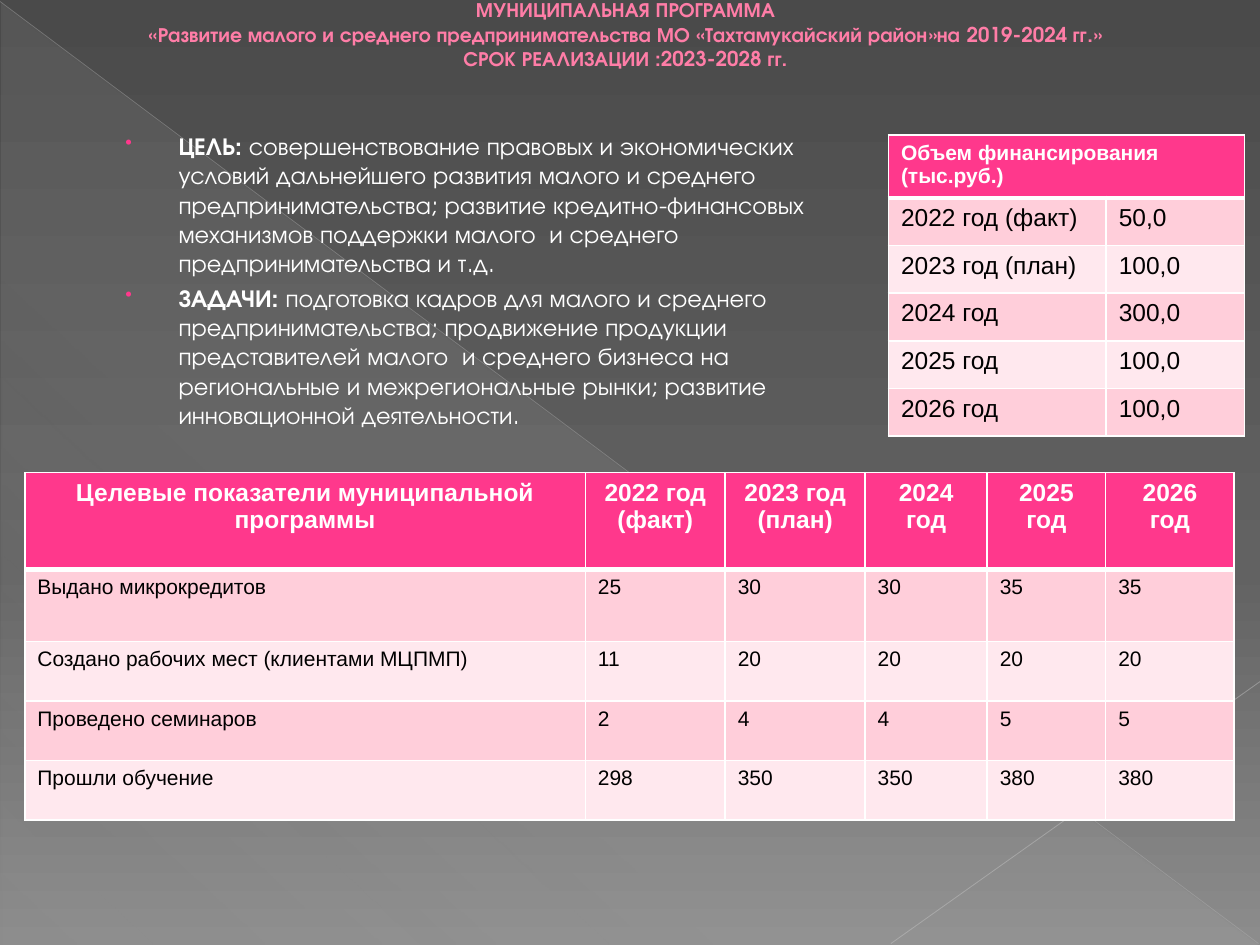
from lxml import etree
from pptx import Presentation
from pptx.dml.color import RGBColor
from pptx.enum.shapes import MSO_CONNECTOR as Link, MSO_SHAPE as Shape
from pptx.enum.text import MSO_ANCHOR as Anchor, PP_ALIGN as Align
from pptx.oxml.ns import qn
from pptx.util import Cm, Pt

paint = RGBColor.from_string
FONT = "TeX Gyre Adventor"
PINK, WHITE, BLACK = "FF388C", "FFFFFF", "000000"
BANDS = ["FFE8EE", "FFCEDA"]


def blend(node, angle, stops):
    node.find(qn("a:lin")).set("ang", str(angle * 60000))
    group = node.find(qn("a:gsLst"))
    for old in list(group):
        group.remove(old)
    for pos, tint, alpha in stops:
        stop = etree.SubElement(group, qn("a:gs"), pos=str(pos * 1000))
        color = etree.SubElement(stop, qn("a:srgbClr"), val=tint)
        etree.SubElement(color, qn("a:alpha"), val=str(alpha * 1000))


def grid(x, y, cols, rows, data, sizes, align):
    frame = slide.shapes.add_table(len(rows), len(cols), Cm(x), Cm(y), Cm(sum(cols)), Cm(sum(rows)))
    table = frame.table
    for col, width in zip(table.columns, cols):
        col.width = Cm(width)
    for row, height in zip(table.rows, rows):
        row.height = Cm(height)
    for i, line in enumerate(data):
        for j, words in enumerate(line):
            cell = table.cell(i, j)
            props = cell._tc.get_or_add_tcPr()
            for side in "LRTB":
                thick = (i, side) in [(0, "B"), (1, "T")]
                edge = etree.SubElement(props, qn("a:ln" + side), w=str(Pt(3 if thick else 1)))
                solid = etree.SubElement(edge, qn("a:solidFill"))
                etree.SubElement(solid, qn("a:srgbClr"), val=WHITE)
            cell.fill.solid()
            cell.fill.fore_color.rgb = paint(BANDS[i % 2] if i else PINK)
            for n, part in enumerate(words.split("\n")):
                para = cell.text_frame.add_paragraph() if n else cell.text_frame.paragraphs[0]
                para.alignment = Align.LEFT if i else align
                if part:
                    run = para.add_run()
                    run.text = part
                    run.font.name = "Arial"
                    run.font.size = Pt(sizes[i > 0])
                    run.font.bold = i == 0
                    run.font.color.rgb = paint(BLACK if i else WHITE)
    return table


deck = Presentation()
deck.slide_width, deck.slide_height = Cm(25.4), Cm(19.05)
slide = deck.slides.add_slide(deck.slide_layouts[6])

slide.background.fill.gradient()
blend(slide.element.xpath(".//p:bgPr/a:gradFill")[0], 90,
      [(0, "4A4A4A", 100), (60, "626262", 100), (100, "8C8C8C", 100)])

wedge = slide.shapes.add_shape(Shape.RIGHT_TRIANGLE, Cm(0.03), Cm(0.05), Cm(25.35), Cm(19))
wedge.shadow.inherit = False
wedge.line.fill.background()
wedge.fill.gradient()
blend(wedge.element.xpath("./p:spPr/a:gradFill")[0], 133,
      [(0, "D2D2D2", 10), (70, "D2D2D2", 8), (100, "D2D2D2", 1)])

for x1, y1, x2, y2, tint, width, alpha in [
    (0, 0.03, 25.37, 19.02, "BFBFBF", 0.39, 35),
    (25.4, 13.74, 17.96, 19.02, "C6C6C6", 0.47, 45),
]:
    ray = slide.shapes.add_connector(Link.STRAIGHT, Cm(x1), Cm(y1), Cm(x2), Cm(y2))
    ray.line.width = Pt(width)
    ray.line.color.rgb = paint(tint)
    color = ray.element.xpath(".//a:ln//a:srgbClr")[0]
    etree.SubElement(color, qn("a:alpha"), val=str(alpha * 1000))
    etree.SubElement(ray.element.spPr, qn("a:effectLst"))

title = slide.shapes.add_textbox(Cm(0.71), Cm(0), Cm(23.8), Cm(2.34)).text_frame
title.word_wrap = True
title.vertical_anchor = Anchor.MIDDLE
title.margin_top, title.margin_bottom = Cm(0), Cm(0.97)
para = title.paragraphs[0]
para.alignment = Align.CENTER
for n, words in enumerate([
    "МУНИЦИПАЛЬНАЯ ПРОГРАММА",
    "«Развитие малого и среднего предпринимательства МО «Тахтамукайский район»на 2019-2024 гг.»",
    "СРОК РЕАЛИЗАЦИИ :2023-2028 гг.",
]):
    if n:
        para.add_line_break()
    run = para.add_run()
    run.text = words
    run.font.name, run.font.size, run.font.bold = FONT, Pt(11.7), True
    run.font.color.rgb = paint("FF7DA7")

funds = grid(17.91, 2.72, [4.39, 2.79], [1.2] + [0.96] * 5, [
    ["Объем финансирования (тыс.руб.)", ""],
    ["2022 год (факт)", "50,0"],
    ["2023 год (план)", "100,0"],
    ["2024 год", "300,0"],
    ["2025 год", "100,0"],
    ["2026 год", "100,0"],
], (12, 14), Align.LEFT)
funds.cell(0, 0).merge(funds.cell(0, 1))

body = slide.shapes.add_textbox(Cm(2.11), Cm(2.51), Cm(15.39), Cm(6.4)).text_frame
body.word_wrap = True
for n, (head, words) in enumerate([
    ("ЦЕЛЬ: ", "совершенствование правовых и экономических условий дальнейшего развития малого и среднего "
     "предпринимательства; развитие кредитно-финансовых механизмов поддержки малого  и среднего "
     "предпринимательства и т.д."),
    ("ЗАДАЧИ: ", "подготовка кадров для малого и среднего предпринимательства; продвижение продукции "
     "представителей малого  и среднего бизнеса на региональные и межрегиональные рынки; развитие "
     "инновационной деятельности."),
]):
    para = body.add_paragraph() if n else body.paragraphs[0]
    para.space_before = Pt(2.8)
    props = para._p.get_or_add_pPr()
    props.set("marL", str(Cm(1.24)))
    props.set("indent", str(Cm(-1.07)))
    tint = etree.SubElement(props, qn("a:buClr"))
    etree.SubElement(tint, qn("a:srgbClr"), val=PINK)
    etree.SubElement(props, qn("a:buSzPct"), val="80000")
    etree.SubElement(props, qn("a:buChar"), char="•")
    for part, bold in [(head, True), (words, False)]:
        run = para.add_run()
        run.text = part
        run.font.name, run.font.size, run.font.bold = FONT, Pt(14), bold
        run.font.color.rgb = paint(WHITE)

grid(0.5, 9.53, [11.3, 2.82, 2.82, 2.46, 2.39, 2.59], [1.95, 1.45] + [1.2] * 3, [
    ["Целевые показатели муниципальной программы", "2022 год (факт)", "2023 год (план)",
     "2024 год", "2025\nгод", "2026\nгод"],
    ["Выдано микрокредитов", "25", "30", "30", "35", "35"],
    ["Создано рабочих мест (клиентами МЦПМП)", "11", "20", "20", "20", "20"],
    ["Проведено семинаров", "2", "4", "4", "5", "5"],
    ["Прошли обучение", "298", "350", "350", "380", "380"],
], (14, 12), Align.CENTER)

deck.save("out.pptx")
